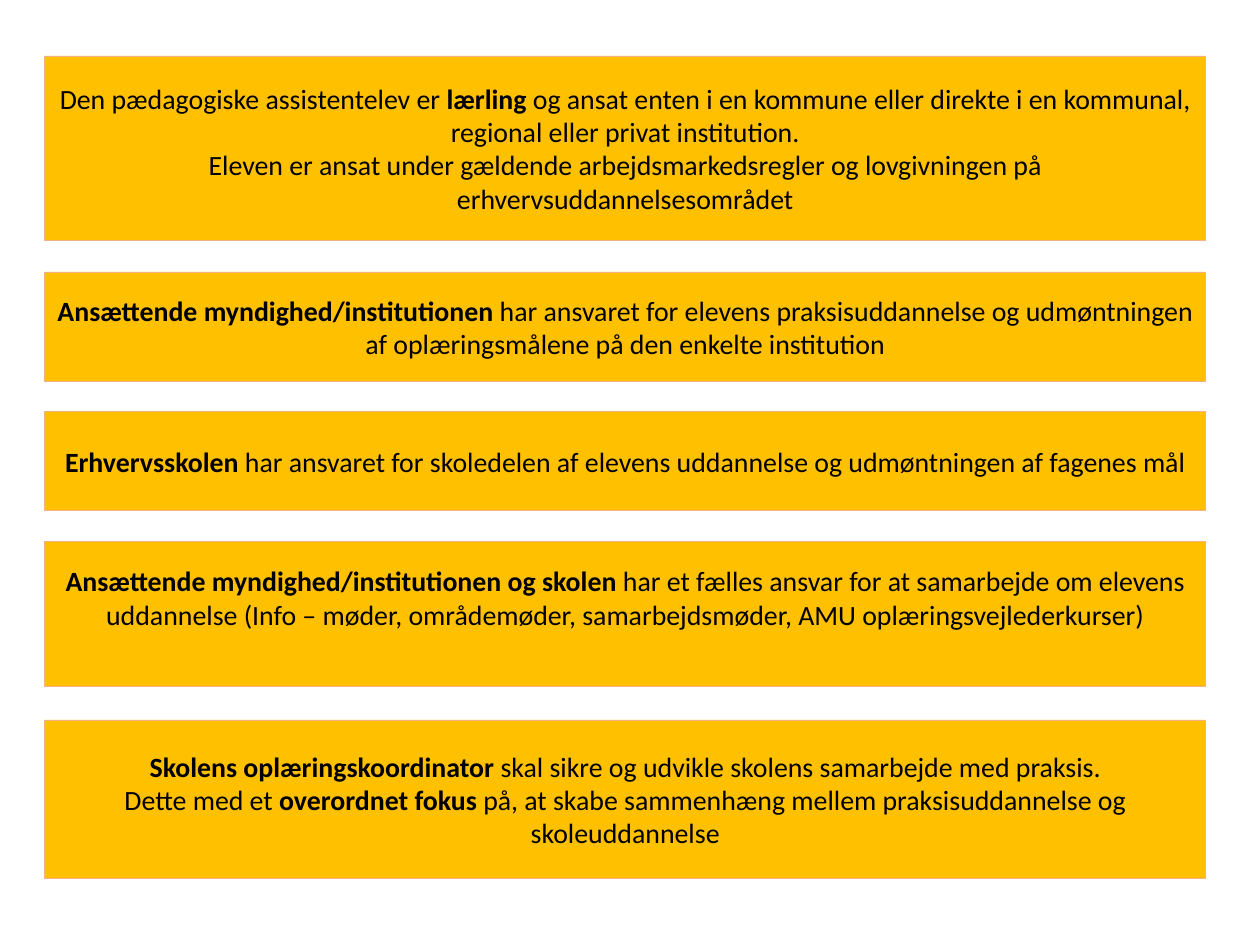
from pptx import Presentation
from pptx.dml.color import RGBColor
from pptx.enum.shapes import MSO_SHAPE
from pptx.enum.text import MSO_ANCHOR, PP_ALIGN
from pptx.util import Inches, Pt

RECT = MSO_SHAPE.RECTANGLE
MIDDLE = MSO_ANCHOR.MIDDLE
CENTER = PP_ALIGN.CENTER

COLORS = {"box": "FFC000", "border": "F4B183", "text": "000000"}
LEFT, WIDTH = 0.84, 21.76

# Each box: top, height, bottom inset, paragraphs of (text, bold) runs
BOXES = [
    (1.05, 3.45, 0.05, [
        [("Den pædagogiske assistentelev er ", False), ("lærling", True),
         (" og ansat enten i en kommune eller direkte i en kommunal, "
          "regional eller privat institution.", False)],
        [("Eleven er ansat under gældende arbejdsmarkedsregler og lovgivningen på "
          "erhvervsuddannelsesområdet", False)],
    ]),
    (5.1, 2.05, 0.05, [
        [("Ansættende myndighed/institutionen ", True),
         ("har ansvaret for elevens praksisuddannelse og udmøntningen "
          "af oplæringsmålene på den enkelte institution", False)],
    ]),
    (7.72, 1.86, 0.05, [
        [("Erhvervsskolen", True),
         (" har ansvaret for skoledelen af elevens uddannelse og udmøntningen "
          "af fagenes mål", False)],
    ]),
    (10.15, 2.73, 0.68, [
        [("Ansættende myndighed/institutionen og skolen ", True),
         ("har et fælles ansvar for at samarbejde om elevens uddannelse "
          "(Info – møder, områdemøder, samarbejdsmøder, "
          "AMU oplæringsvejlederkurser)", False)],
    ]),
    (13.5, 2.98, 0.05, [
        [("Skolens oplæringskoordinator ", True),
         ("skal sikre og udvikle skolens samarbejde med praksis.", False)],
        [("Dette med et ", False), ("overordnet fokus ", True),
         ("på, at skabe sammenhæng mellem praksisuddannelse og "
          "skoleuddannelse", False)],
    ]),
]


def add_run(p, text, bold=False, size=37.6, font="Calibri", color="text"):
    r = p.add_run()
    r.text = text
    r.font.bold = bold
    r.font.size = Pt(size)
    r.font.name = font
    r.font.color.rgb = RGBColor.from_string(COLORS[color])


prs = Presentation()
prs.slide_width = Inches(23.62)
prs.slide_height = Inches(17.72)
s = prs.slides.add_slide(prs.slide_layouts[6])

for top, height, bottom_inset, paragraphs in BOXES:
    sp = s.shapes.add_shape(RECT, Inches(LEFT), Inches(top), Inches(WIDTH), Inches(height))
    sp.shadow.inherit = False
    sp.fill.solid()
    sp.fill.fore_color.rgb = RGBColor.from_string(COLORS["box"])
    sp.line.color.rgb = RGBColor.from_string(COLORS["border"])
    sp.line.width = Pt(1)
    tf = sp.text_frame
    tf.word_wrap = True
    tf.vertical_anchor = MIDDLE
    tf.margin_bottom = Inches(bottom_inset)
    for i, runs in enumerate(paragraphs):
        p = tf.add_paragraph() if i else tf.paragraphs[0]
        p.alignment = CENTER
        for text, bold in runs:
            add_run(p, text, bold=bold)

prs.save("out.pptx")
